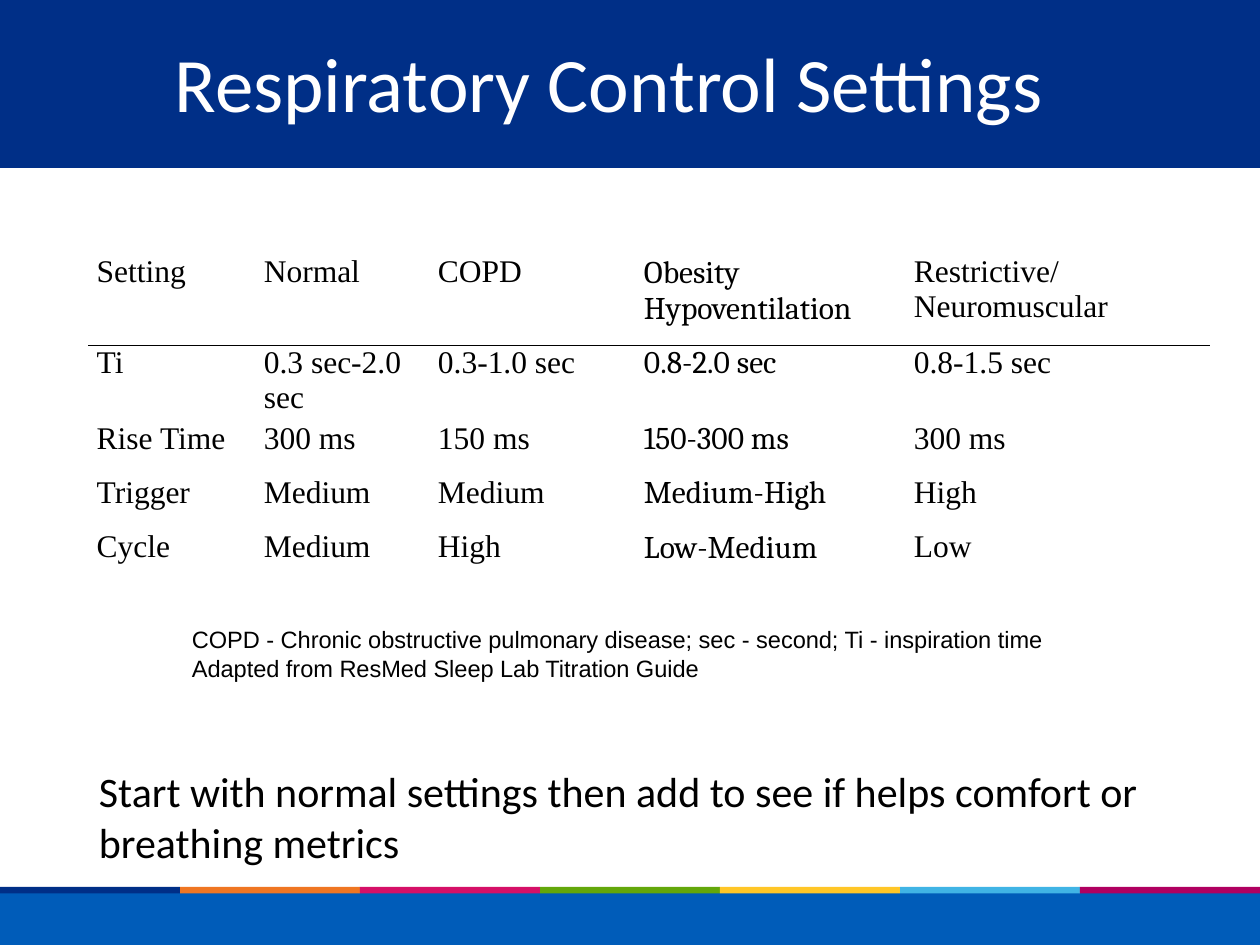
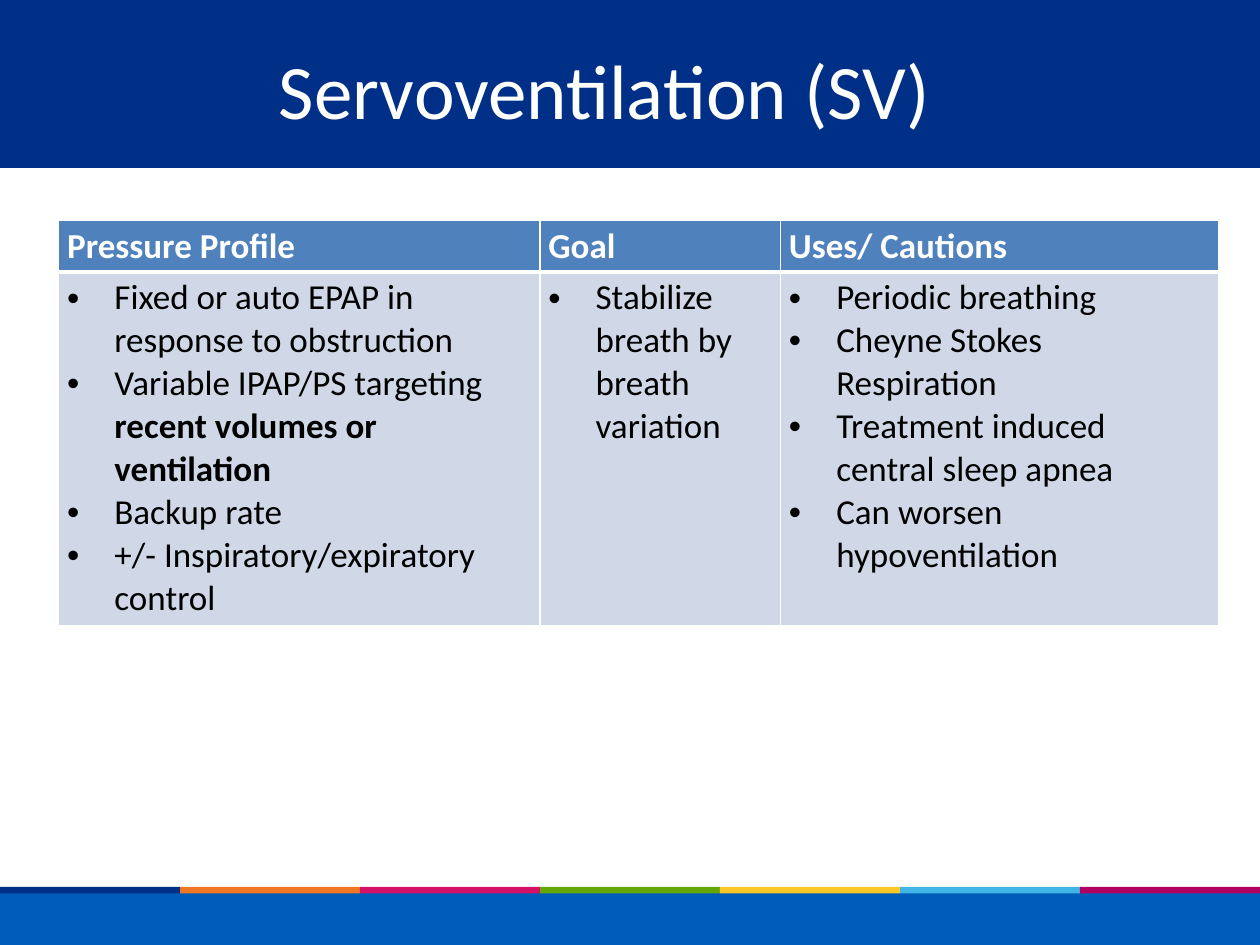
from lxml.etree import SubElement
from pptx import Presentation
from pptx.dml.color import RGBColor
from pptx.enum.shapes import MSO_SHAPE
from pptx.enum.text import MSO_ANCHOR, PP_ALIGN
from pptx.oxml import parse_xml
from pptx.oxml.ns import nsdecls, qn
from pptx.util import Pt

SLIDE_W, SLIDE_H = 720, 540
COLORS = {
    "navy": "002F87", "orange": "EF7622", "pink": "D51067", "green": "63A70A",
    "yellow": "FFC627", "sky": "40B4E5", "magenta": "B00060", "footer": "005CB9",
    "white": "FFFFFF", "black": "000000", "header": "4F81BD", "body": "D0D8E8",
}
STRIPE = ["navy", "orange", "pink", "green", "yellow", "sky", "magenta"]

SETTINGS = [
    ["Setting", "Normal", "COPD", "Obesity\nHypoventilation", "Restrictive/\nNeuromuscular"],
    ["Ti", "0.3 sec-2.0 sec", "0.3-1.0 sec", "0.8-2.0 sec", "0.8-1.5 sec"],
    ["Rise Time", "300 ms", "150 ms", "150-300 ms", "300 ms"],
    ["Trigger", "Medium", "Medium", "Medium-High", "High"],
    ["Cycle", "Medium", "High", "Low-Medium", "Low"],
]
# Each bullet is a plain part and an optional bold part
SERVO = {
    "Pressure Profile": [
        ("Fixed or auto EPAP in response to obstruction",),
        ("Variable IPAP/PS targeting ", "recent volumes or ventilation"),
        ("Backup rate",),
        ("+/- Inspiratory/expiratory control",),
    ],
    "Goal": [("Stabilize breath by breath variation",)],
    "Uses/ Cautions": [
        ("Periodic breathing",),
        ("Cheyne Stokes Respiration",),
        ("Treatment induced central sleep apnea",),
        ("Can worsen hypoventilation",),
    ],
}


def rgb(name):
    return RGBColor.from_string(COLORS[name])


def style_font(font, face, size, color="black", bold=None):
    font.name, font.size, font.bold = face, Pt(size), bold
    font.color.rgb = rgb(color)


def add_band(slide, box, color):
    band = slide.shapes.add_shape(MSO_SHAPE.RECTANGLE, *map(Pt, box))
    band.shadow.inherit = False
    band.fill.solid()
    band.fill.fore_color.rgb = rgb(color)
    band.line.fill.background()


def add_text(slide, box, text, face, size, color="black", align=None,
             anchor=MSO_ANCHOR.TOP, inset=(7.2, 3.6)):
    frame = slide.shapes.add_textbox(*map(Pt, box)).text_frame
    frame.word_wrap = True
    frame.vertical_anchor = anchor
    frame.margin_left = frame.margin_right = Pt(inset[0])
    frame.margin_top = frame.margin_bottom = Pt(inset[1])
    paragraph = frame.paragraphs[0]
    paragraph.text, paragraph.alignment = text, align
    style_font(paragraph.font, face, size, color)


def add_grid(slide, box, col_widths, row_heights):
    """Table with its column widths and row heights set."""
    frame = slide.shapes.add_table(len(row_heights), len(col_widths), *map(Pt, box))
    grid = frame.table
    grid.first_row = grid.horz_banding = False
    for column, width in zip(grid.columns, col_widths):
        column.width = Pt(width)
    for row, height in zip(grid.rows, row_heights):
        row.height = Pt(height)
    return grid


def style_cell(cell, fill, inset, borders):
    """Borders map sides, in the order L R T B, to (color, width)."""
    cell.margin_left = cell.margin_right = Pt(inset[0])
    cell.margin_top = cell.margin_bottom = Pt(inset[1])
    cell.fill.solid()
    cell.fill.fore_color.rgb = rgb(fill)
    properties = cell._tc.get_or_add_tcPr()
    for position, (side, (color, width)) in enumerate(borders.items()):
        properties.insert(position, parse_xml(
            f'<a:ln{side} {nsdecls("a")} w="{Pt(width)}"><a:solidFill>'
            f'<a:srgbClr val="{COLORS[color]}"/></a:solidFill></a:ln{side}>'))


def add_bullet(paragraph, indent):
    properties = paragraph._p.get_or_add_pPr()
    properties.set("marL", str(Pt(indent)))
    properties.set("indent", str(Pt(-indent)))
    SubElement(properties, qn("a:buFont"), typeface="Arial")
    SubElement(properties, qn("a:buChar"), char="•")


def add_frame(prs, title, title_box):
    """Slide with title band, footer and colour stripe."""
    slide = prs.slides.add_slide(prs.slide_layouts[6])
    add_band(slide, (0, 510, SLIDE_W, SLIDE_H - 510), "footer")
    step = SLIDE_W / len(STRIPE)
    for index, color in enumerate(STRIPE):
        add_band(slide, (index * step, 506.8, step, 3.7), color)
    add_band(slide, (0, 0, SLIDE_W, 96), "navy")
    add_text(slide, title_box, title, "Calibri", 44, "white",
             PP_ALIGN.CENTER, MSO_ANCHOR.MIDDLE)
    return slide


def add_settings_table(slide, box):
    grid = add_grid(slide, box, [95.5, 99.5, 117.75, 154.25, 173], [52, 43, 31, 31, 28])
    rules = {0: {"B": ("black", 1)}, 1: {"T": ("black", 1)}}
    for r, values in enumerate(SETTINGS):
        for c, value in enumerate(values):
            cell = grid.cell(r, c)
            cell.text = value
            style_cell(cell, "white", (4.3, 0), rules.get(r, {}))
            for paragraph in cell.text_frame.paragraphs:
                style_font(paragraph.font, "Cambria" if c == 3 else "Times New Roman", 18)


def add_servo_table(slide, box):
    grid = add_grid(slide, box, [275, 137.5, 250.5], [29.5, 202])
    thin, thick = ("white", 1), ("white", 3)
    for c, (heading, bullets) in enumerate(SERVO.items()):
        # Heading
        head = grid.cell(0, c)
        head.text = heading
        style_cell(head, "header", (4.9, 2.6), {"L": thin, "R": thin, "T": thin, "B": thick})
        style_font(head.text_frame.paragraphs[0].font, "Calibri", 20, "white", True)
        # Bullets
        body = grid.cell(1, c)
        style_cell(body, "body", (4.9, 2.6), {"L": thin, "R": thin, "T": thick, "B": thin})
        for index, parts in enumerate(bullets):
            frame = body.text_frame
            paragraph = frame.add_paragraph() if index else frame.paragraphs[0]
            add_bullet(paragraph, 27)
            style_font(paragraph.font, "Calibri", 20)
            for part, bold in zip(parts, (False, True)):
                run = paragraph.add_run()
                run.text, run.font.bold = part, bold


def build_settings_slide(prs):
    slide = add_frame(prs, "Respiratory Control Settings", (24, 9.5, 648, 74))
    add_settings_table(slide, (51, 145.5, 640, 185))
    # Abbreviations and reference
    add_text(slide, (104.7, 354.5, 512.5, 38),
             "COPD - Chronic obstructive pulmonary disease; sec - second; "
             "Ti - inspiration time Adapted from ResMed Sleep Lab Titration Guide",
             "Arial", 13.5, anchor=MSO_ANCHOR.MIDDLE, inset=(5, 2.6))
    # Advice
    add_text(slide, (49.5, 434, 623, 65.5),
             "Start with normal settings then add to see if helps comfort or breathing metrics",
             "Calibri", 24)


def build_servo_slide(prs):
    slide = add_frame(prs, "Servoventilation (SV)", (18, 11.5, 655, 78.5))
    add_servo_table(slide, (33.5, 126, 663, 231.5))


def main():
    prs = Presentation()
    prs.slide_width, prs.slide_height = Pt(SLIDE_W), Pt(SLIDE_H)
    build_settings_slide(prs)
    build_servo_slide(prs)
    prs.save("out.pptx")


if __name__ == "__main__":
    main()
